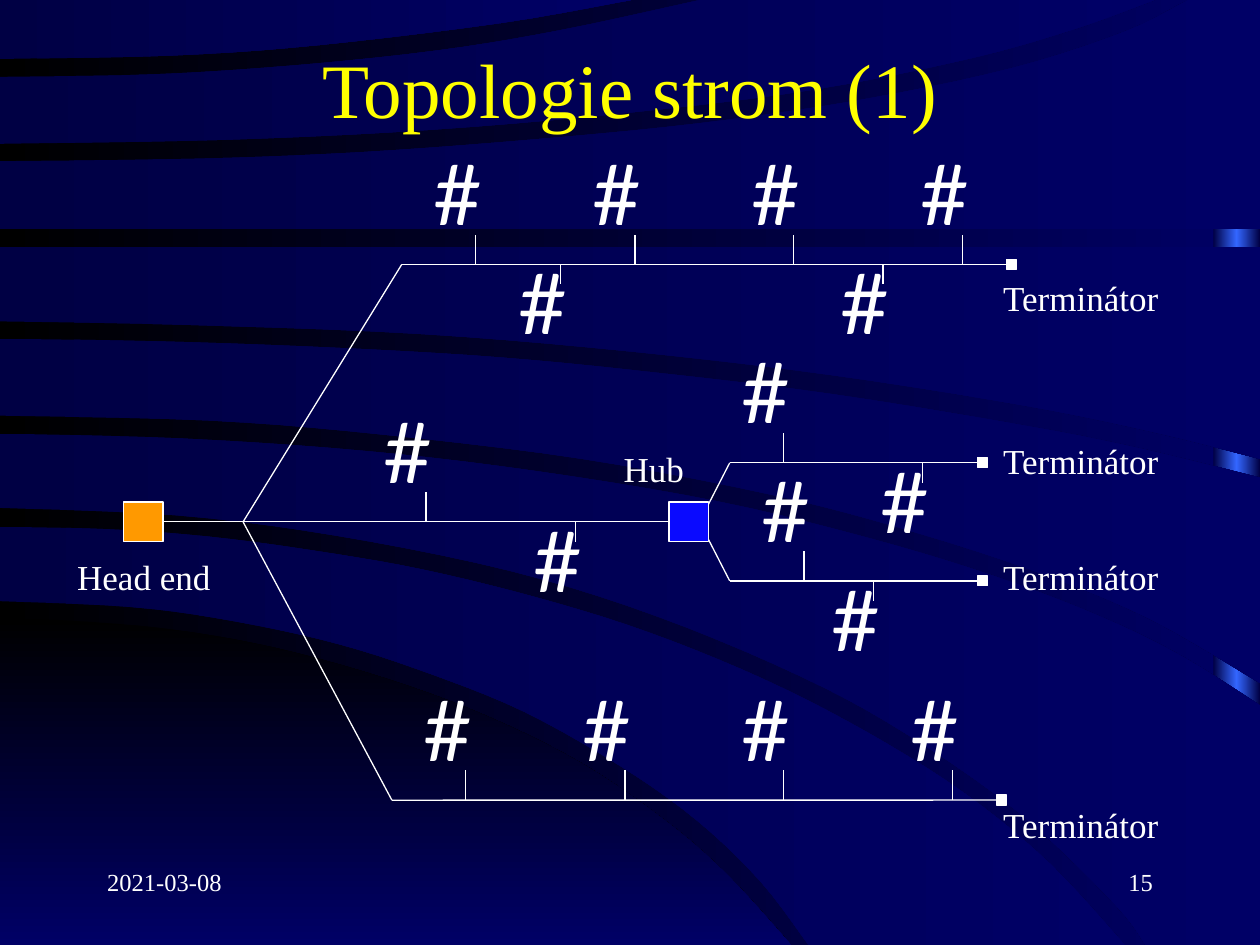
from copy import deepcopy

from pptx import Presentation
from pptx import util as u
from pptx.dml.color import RGBColor
from pptx.enum import shapes, text
from pptx.oxml.xmlchemy import OxmlElement

COLORS = {"white": "FFFFFF", "title": "FFFF00", "head": "FF9900", "hub": "0A0AFF",
          "black": "000000", "dark": "000044", "navy": "000066", "glow": "3366FF"}
SERIF, SANS = "Times New Roman", "Lato"
WIDTH, HEIGHT = 25.4, 19.05
NODE, TERMINATOR = 0.8, 0.2

HILL = [(0, 12.47), (1.55, 12.52), (3.53, 12.7), (5.54, 13.06), (7.75, 13.67), (9.8, 14.43),
        (11.73, 15.39), (13.41, 16.54), (14.66, 17.63), (15.95, HEIGHT)]

# Each band: upper edge, corner points, lower edge
BANDS = [
    ([(0, 10.62), (2.21, 10.67), (4.22, 10.82), (6.32, 11.1), (8.51, 11.48), (10.87, 12.06),
      (13.08, 12.75), (15.39, 13.69), (17.48, 14.76), (19.46, 16), (21.16, 17.4),
      (22.68, HEIGHT)], [],
     [(0, 12.12), (2.67, 12.24), (4.7, 12.52), (6.81, 12.98), (8.69, 13.59), (10.57, 14.35),
      (12.5, 15.44), (14.05, 16.54), (15.34, 17.78), (16.3, HEIGHT)]),
    ([(0, 8.74), (3.66, 8.84), (7.34, 9.09), (10.82, 9.5), (14.48, 10.11), (17.6, 10.87),
      (20.04, 11.61), (22.17, 12.42), (23.83, 13.23), (WIDTH, 14.22)], [(WIDTH, HEIGHT)],
     [(0, 10.24), (3.56, 10.39), (6.78, 10.8), (10.29, 11.51), (13.23, 12.42), (16.15, 13.64),
      (18.29, 14.81), (20.57, 16.41), (22.48, 18.24), (23.09, HEIGHT)]),
    ([(0, 6.83), (3.15, 6.88), (6.73, 7.01), (10.13, 7.21), (13.28, 7.52), (16.81, 7.95),
      (20.73, 8.59), (22.99, 9.04), (WIDTH, 9.63)], [],
     [(0, 8.38), (4.24, 8.48), (7.7, 8.76), (11.73, 9.25), (15.49, 9.96), (18.06, 10.62),
      (20.75, 11.48), (23.16, 12.47), (WIDTH, 13.77)]),
    ([(0, 4.98), (WIDTH, 4.98)], [],
     [(0, 6.48), (3.73, 6.55), (8.43, 6.73), (12.75, 7.09), (16.81, 7.57), (20.65, 8.18),
      (23.24, 8.71), (WIDTH, 9.25)]),
    ([(0, 3.25), (3.99, 3.2), (7.26, 3.07), (10.67, 2.82), (14.07, 2.49), (17.37, 2.01),
      (20.4, 1.37), (22.66, 0.64), (23.95, 0)], [(WIDTH, 0)],
     [(0, 4.62), (WIDTH, 4.62)]),
    ([(0, 1.55), (3.07, 1.5), (5.92, 1.32), (8.81, 1.02), (11.3, 0.61), (14.12, 0)], [],
     [(0, 2.9), (4.5, 2.82), (8.66, 2.62), (12.8, 2.26), (16.46, 1.8), (19.61, 1.17),
      (21.69, 0.58), (23.29, 0)]),
    ([(0, 0), (12.73, 0)], [],
     [(0, 1.19), (3.48, 1.12), (6.43, 0.91), (10.13, 0.46), (12.73, 0)]),
]


def rgb(name):
    return RGBColor.from_string(COLORS[name])


def set_gradient(fill, names, angle=0):
    """Fill with evenly spaced colour stops, two or more."""
    fill.gradient()
    fill.gradient_angle = angle
    first = fill.gradient_stops[0]._gs
    for _ in names[2:]:
        first.addnext(deepcopy(first))
    for index, (stop, name) in enumerate(zip(fill.gradient_stops, names)):
        stop.color.rgb = rgb(name)
        stop.position = index / (len(names) - 1)


def smooth(points, steps=5):
    """Return points along a Catmull-Rom curve through the given points."""
    padded = [points[0], *points, points[-1]]
    curve = [points[0]]
    for a, b, c, d in zip(padded, padded[1:], padded[2:], padded[3:]):
        for t in (step / steps for step in range(1, steps + 1)):
            curve.append(tuple(
                (2 * q + (r - p) * t + (2 * p - 5 * q + 4 * r - s) * t ** 2
                 + (3 * q - p - 3 * r + s) * t ** 3) / 2
                for p, q, r, s in zip(a, b, c, d)))
    return curve


def add_area(slide, points, names, angle=0):
    corners = [(u.Cm(x), u.Cm(y)) for x, y in points]
    builder = slide.shapes.build_freeform(*corners[0], scale=1.0)
    builder.add_line_segments(corners[1:], close=True)
    shape = builder.convert_to_shape()
    shape.shadow.inherit = False
    shape.line.fill.background()
    set_gradient(shape.fill, names, angle)


def add_rectangle(slide, left, top, width, height, color):
    shape = slide.shapes.add_shape(shapes.MSO_SHAPE.RECTANGLE, *map(u.Cm, (left, top, width, height)))
    shape.shadow.inherit = False
    shape.fill.solid()
    shape.fill.fore_color.rgb = rgb(color)
    shape.line.color.rgb = rgb("white")
    shape.line.width = u.Pt(0.75)
    return shape


def add_line(slide, start, end):
    line = slide.shapes.add_connector(shapes.MSO_CONNECTOR.STRAIGHT, *map(u.Cm, (*start, *end)))
    line.line.color.rgb = rgb("white")
    line.line.width = u.Pt(0.75)
    line._element.spPr.append(OxmlElement("a:effectLst"))
    return line


def add_text(slide, box, words, size, color="white", font=SERIF, align="LEFT", anchor="TOP", wrap=True):
    shape = slide.shapes.add_textbox(*map(u.Cm, box))
    frame = shape.text_frame
    frame.text = words
    frame.word_wrap = wrap
    frame.vertical_anchor = text.MSO_ANCHOR[anchor]
    paragraph = frame.paragraphs[0]
    paragraph.alignment = text.PP_ALIGN[align]
    run_font = paragraph.runs[0].font
    run_font.name, run_font.size = font, u.Pt(size)
    run_font.color.rgb = rgb(color)
    return frame


def add_label(slide, box, words):
    frame = add_text(slide, box, words, 20, align="CENTER", anchor="MIDDLE", wrap=False)
    frame.margin_left = frame.margin_right = 0


def add_stations(slide, left, y, above, below=()):
    """Hang stations on a cable at the given distances from its left end."""
    for offsets, stub, top in ((above, -0.6, -2.6), (below, 0.4, -0.4)):
        for offset in offsets:
            x = left + offset
            add_line(slide, (x, y), (x, y + stub))
            frame = add_text(slide, (x - 1.1, y + top, 2.21, 2.29), "#", 48, font=SANS, wrap=False)
            frame.auto_size = text.MSO_AUTO_SIZE.SHAPE_TO_FIT_TEXT


def add_branch(slide, origin, left, y, length, label_top, above, below=()):
    """Draw a cable from its origin to a labelled terminator."""
    right = left + length
    add_line(slide, origin, (left, y))
    end = add_rectangle(slide, right, y - TERMINATOR / 2, TERMINATOR, TERMINATOR, "white")
    add_line(slide, (left, y), (right, y)).end_connect(end, 1)
    add_stations(slide, left, y, above, below)
    add_label(slide, (20.09, label_top, 3.4, 0.99), "Terminátor")


def add_backdrop(slide):
    set_gradient(slide.background.fill, ("black", "navy"))
    strip = add_rectangle(slide, 24.46, 0, 0.94, HEIGHT, "dark")
    strip.line.fill.background()
    set_gradient(strip.fill, ("dark", "glow", "dark"))
    add_area(slide, smooth(HILL) + [(0, HEIGHT)], ("black", "navy"), 270)
    for upper, corners, lower in BANDS:
        add_area(slide, smooth(upper) + corners + smooth(lower)[::-1], ("dark", "navy"))


def add_tree(slide, left, y):
    """Draw the network; left and y give the middle of the head end's left side."""
    fork = (left + 2.41, y)
    hub_left = left + 11
    hub_centre = (hub_left + 0.61, y)
    long_taps = (1.49, 4.7, 7.9, 11.3)
    add_branch(slide, fork, left + 5.61, y - 5.19, 12.19, y - 5.01, long_taps, (3.2, 9.7))
    add_branch(slide, fork, left + 5.41, y + 5.61, 12.19, y + 5.61, long_taps)
    add_branch(slide, hub_centre, left + 12.22, y - 1.19, 5, y - 1.73, (1.09,), (3.89,))
    add_branch(slide, hub_centre, left + 12.22, y + 1.19, 5, y + 0.61, (1.5,), (2.9,))

    head = add_rectangle(slide, left, y - NODE / 2, NODE, NODE, "head")
    hub = add_rectangle(slide, hub_left, y - NODE / 2, NODE, NODE, "hub")
    trunk = add_line(slide, (left + NODE, y), (hub_left, y))
    trunk.begin_connect(head, 3)
    trunk.end_connect(hub, 1)
    add_stations(slide, left + NODE, y, (5.3,), (8.31,))
    add_label(slide, (left - 1.19, y + 0.4, 3.2, 1.4), "Head end")
    add_label(slide, (hub_left - 1.4, y - 1.78, 2.18, 1.4), "Hub")


def main():
    presentation = Presentation()
    presentation.slide_width, presentation.slide_height = u.Cm(WIDTH), u.Cm(HEIGHT)
    slide = presentation.slides.add_slide(presentation.slide_layouts[6])
    add_backdrop(slide)
    add_text(slide, (1.9, 0.5, 21.6, 2.54), "Topologie strom (1)", 44, "title",
             align="CENTER", anchor="MIDDLE")
    add_tree(slide, 2.49, 10.52)
    add_text(slide, (1.91, 17.35, 5.28, 1.27), "2021-03-08", 14)
    add_text(slide, (18.21, 17.35, 5.28, 1.27), "15", 14, align="RIGHT")
    presentation.save("out.pptx")


if __name__ == "__main__":
    main()
